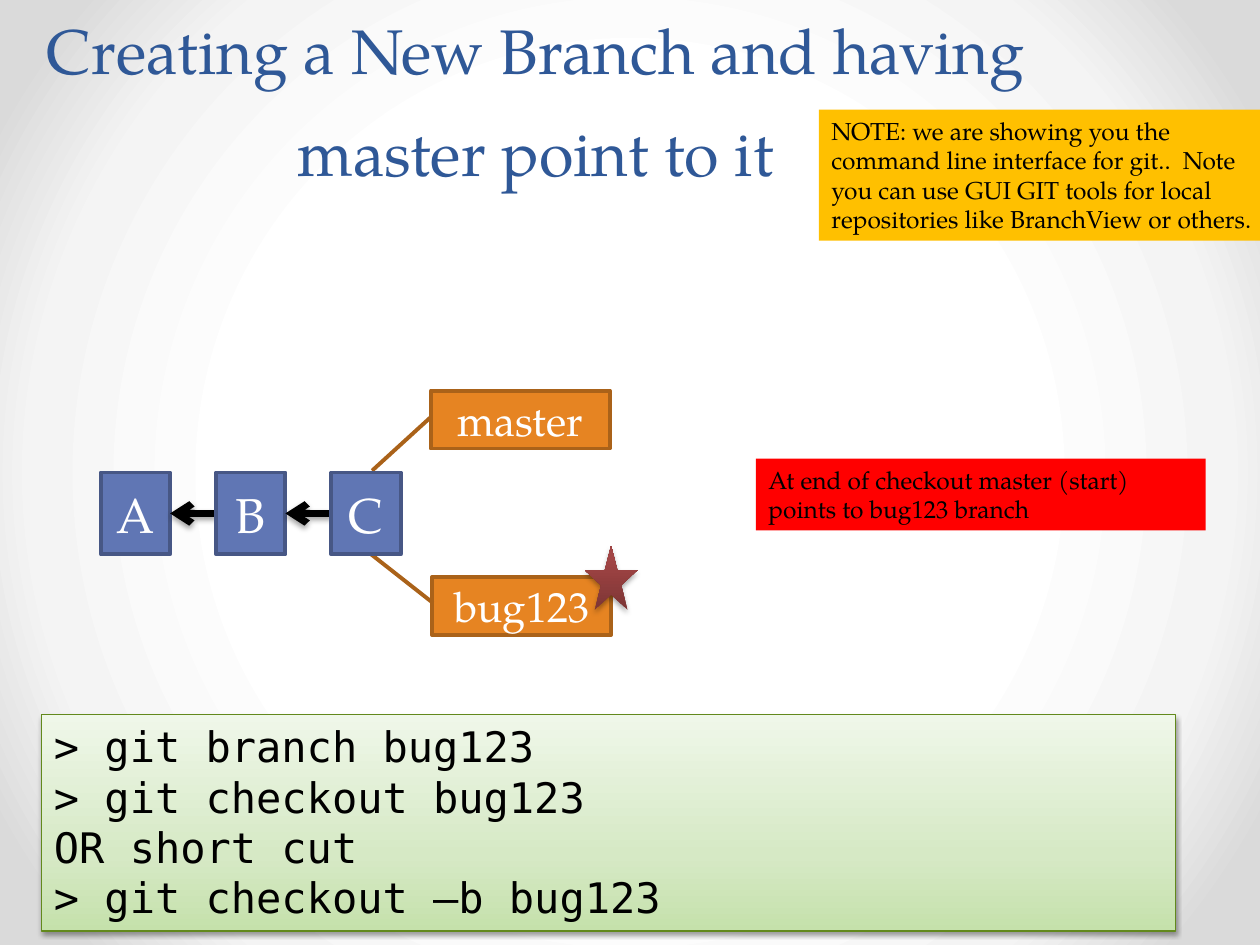
"""Build the slide about creating a git branch and pointing master to it."""
import pptx
import pptx.dml.color
import pptx.enum.shapes
import pptx.enum.text
import pptx.oxml
import pptx.oxml.ns
import pptx.util

SERIF, MONO = "TeX Gyre Pagella", "DejaVu Sans Mono"
SHAPES = pptx.enum.shapes.MSO_SHAPE
ANCHOR = pptx.enum.text.MSO_ANCHOR
ALIGN = pptx.enum.text.PP_ALIGN
FIT = pptx.enum.text.MSO_AUTO_SIZE
Inches, Pt, qn = pptx.util.Inches, pptx.util.Pt, pptx.oxml.ns.qn

TITLE = "Creating a New Branch and having master point to it"
BACKGROUND = [(50, "FFFFFF"), (76, "F4F4F4"), (92, "DADADA")]
COMMITS = ["A", "B", "C"]
COMMIT_LEFT, COMMIT_TOP, COMMIT_WIDTH, COMMIT_HEIGHT, COMMIT_STEP = 0.8, 3.75, 0.55, 0.65, 0.915
BRANCHES = [
    ("bug123", 3.43, 4.58, (0.446, 0.004, -0.389, -0.34)),
    ("master", 3.42, 3.1, (0.446, 0.004, 1.383, -0.329)),
]
COMMANDS = ["> git branch bug123", "> git checkout bug123", "OR short cut",
            "> git checkout –b bug123"]
GREEN = [(0, "C5E1AB"), (35, "D6E9C5"), (100, "EFF7E9")]
MAROON = [(0, "7D3535"), (80, "A24545"), (100, "A44343")]
NOTES = [
    ("NOTE: we are showing you the command line interface for git..  Note you can use "
     "GUI GIT tools for local repositories like BranchView or others.",
     (6.5, 0.87, 3.57, 1.04), "FFC000"),
    ("At end of checkout master (start) points to bug123 branch",
     (6, 3.64, 3.57, 0.57), "FF0000"),
]
LINEAR = '<a:lin ang="16200000" scaled="0"/>'
RADIAL = '<a:path path="circle"><a:fillToRect l="50000" t="50000" r="50000" b="50000"/></a:path>'


def rgb(value):
    return pptx.dml.color.RGBColor.from_string(value)


def xml(tag, content="", attributes=""):
    namespace = pptx.oxml.ns.nsdecls("a")
    return pptx.oxml.parse_xml(f"<a:{tag} {namespace} {attributes}>{content}</a:{tag}>")


def gradient(stops, direction):
    content = "".join(f'<a:gs pos="{position * 1000}"><a:srgbClr val="{color}"/></a:gs>'
                      for position, color in stops)
    return xml("gradFill", f"<a:gsLst>{content}</a:gsLst>{direction}", 'rotWithShape="1"')


def shadow(opacity, distance):
    return xml("outerShdw",
               f'<a:srgbClr val="000000"><a:alpha val="{opacity * 1000}"/></a:srgbClr>',
               f'blurRad="{Pt(3.1)}" dist="{Pt(distance)}" dir="5400000" rotWithShape="0"')


def write(shape, lines, size, color, font=SERIF, align=ALIGN.LEFT, spacing=None, **frame_format):
    frame = shape.text_frame
    frame.text = "\n".join(lines)
    for name, value in {"word_wrap": True, **frame_format}.items():
        setattr(frame, name, value)
    for paragraph in frame.paragraphs:
        paragraph.alignment = align
        paragraph.line_spacing = spacing
        for run in paragraph.runs:
            for name, value in {"name": font, "size": Pt(size), "bold": False}.items():
                setattr(run.font, name, value)
            run.font.color.rgb = rgb(color)


def add_shape(slide, kind, box, fill, line=None, width=0, shade=None):
    shape = slide.shapes.add_shape(kind, *map(Inches, box))
    shape.shadow.inherit = False
    properties = shape.element.spPr
    if shade:
        properties.find(qn("a:effectLst")).append(shadow(*shade))
    if isinstance(fill, list):
        properties.find(qn("a:prstGeom")).addnext(gradient(fill, LINEAR))
    else:
        shape.fill.solid()
        shape.fill.fore_color.rgb = rgb(fill)
    if line:
        shape.line.color.rgb = rgb(line)
        shape.line.width = Pt(width)
    else:
        shape.line.fill.background()
    return shape


def add_arrow(slide, start, end, y):
    arrow = slide.shapes.add_connector(pptx.enum.shapes.MSO_CONNECTOR.STRAIGHT,
                                       *map(Inches, (start, y, end, y)))
    arrow.line.color.rgb = rgb("000000")
    arrow.line.width = Pt(4)
    properties = arrow.element.spPr
    properties.find(qn("a:ln")).append(xml("tailEnd", attributes='type="arrow"'))
    effects = xml("effectLst")
    effects.append(shadow(35, 1.8))
    properties.append(effects)


def main():
    presentation = pptx.Presentation()
    presentation.slide_width, presentation.slide_height = Inches(10), Inches(7.5)
    slide = presentation.slides.add_slide(presentation.slide_layouts[5])
    slide.background.fill.solid()
    background = slide.element.find(".//" + qn("p:bgPr"))
    background.replace(background[0], gradient(BACKGROUND, RADIAL))

    title = slide.shapes.title
    for name, value in zip(("left", "top", "width", "height"), (-0.5, 0.3, 9.5, 1.25)):
        setattr(title, name, Inches(value))
    write(title, [TITLE], 36, "2F5897", align=ALIGN.CENTER, spacing=Pt(58),
          vertical_anchor=ANCHOR.BOTTOM, auto_size=FIT.NONE)

    for name, left, top, adjustments in BRANCHES:
        branch = add_shape(slide, SHAPES.LINE_CALLOUT_1, (left, top, 1.42, 0.46),
                           "E68422", "AA6219", 2.25)
        for index, value in enumerate(adjustments):
            branch.adjustments[index] = value
        write(branch, [name], 24, "FFFFFF", align=ALIGN.CENTER, vertical_anchor=ANCHOR.MIDDLE)

    terminal = add_shape(slide, SHAPES.RECTANGLE, (0.33, 5.67, 9, 1.72), GREEN,
                         "62891C", 0.75, (38, 1.6))
    write(terminal, COMMANDS, 24, "000000", MONO, vertical_anchor=ANCHOR.TOP,
          auto_size=FIT.SHAPE_TO_FIT_TEXT)

    for index, name in enumerate(COMMITS):
        left = COMMIT_LEFT + index * COMMIT_STEP
        if index:
            add_arrow(slide, left, left - COMMIT_STEP + COMMIT_WIDTH,
                      COMMIT_TOP + COMMIT_HEIGHT / 2)
        commit = add_shape(slide, SHAPES.RECTANGLE,
                           (left, COMMIT_TOP, COMMIT_WIDTH, COMMIT_HEIGHT),
                           "6076B4", "475785", 2.25)
        write(commit, [name], 28, "FFFFFF", align=ALIGN.CENTER, vertical_anchor=ANCHOR.MIDDLE)

    add_shape(slide, SHAPES.STAR_5_POINT, (4.64, 4.33, 0.42, 0.51), MAROON, shade=(35, 1.8))

    for text, box, fill in NOTES:
        note = add_shape(slide, SHAPES.RECTANGLE, box, fill)
        write(note, [text], 14, "000000", vertical_anchor=ANCHOR.TOP,
              auto_size=FIT.SHAPE_TO_FIT_TEXT)

    presentation.save("out.pptx")


if __name__ == "__main__":
    main()
